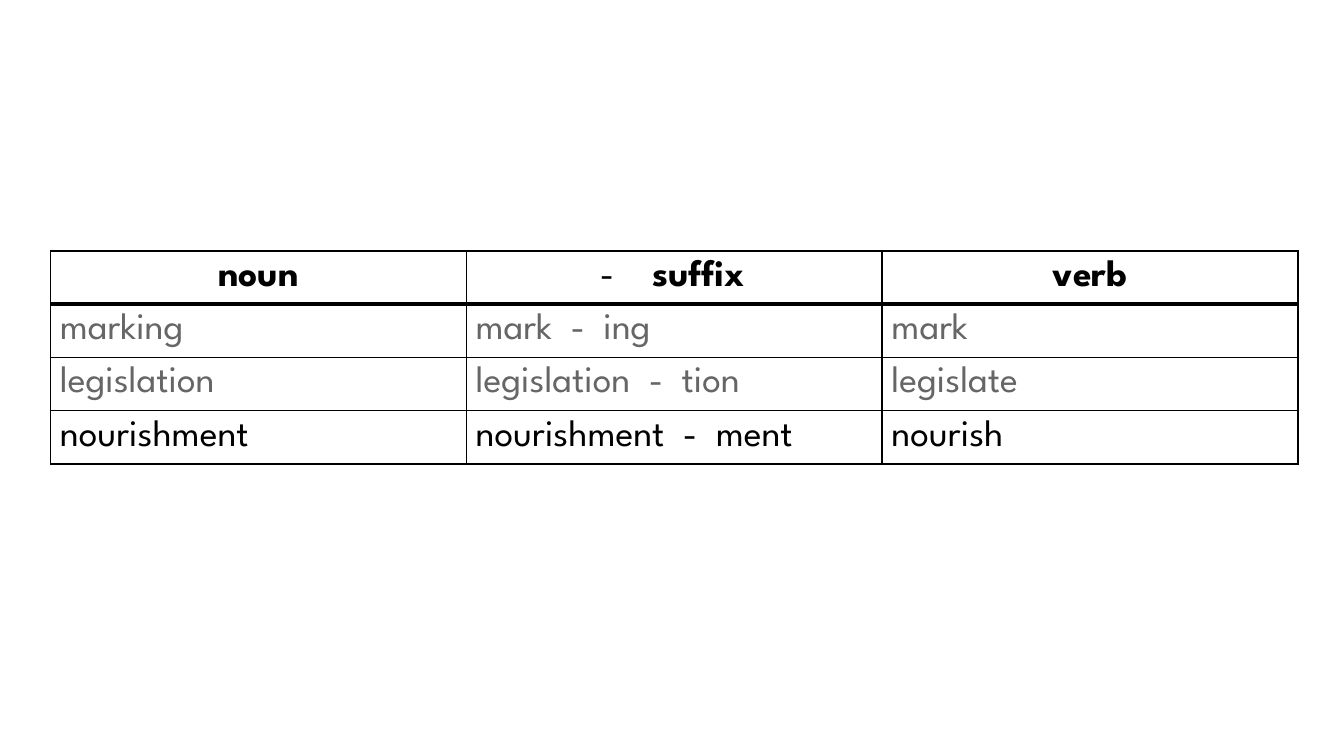
from lxml import etree
from pptx import Presentation
from pptx.dml.color import RGBColor
from pptx.enum.text import PP_ALIGN
from pptx.oxml.ns import qn
from pptx.util import Pt

CENTER, LEFT = PP_ALIGN.CENTER, PP_ALIGN.LEFT
COLORS = {"ink": "000000", "muted": "666666"}
FONT = "League Spartan"
ROWS = [
    ("noun", "suffix", "verb"),
    ("marking", "mark  -  ing", "mark"),
    ("legislation", "legislation  -  tion", "legislate"),
    ("nourishment", "nourishment  -  ment", "nourish"),
]
ROW_COLORS = ["ink", "muted", "muted", "ink"]
TABLE_LEFT, TABLE_TOP = 27.1, 134.5
COLUMN_WIDTH, ROW_HEIGHT = 222.75, 28.5
INSET = 5
THIN, THICK = 1, 2.25


def apply_format(target, values):
    """Set each attribute of the target from a dict."""
    for name, value in values.items():
        setattr(target, name, value)


def add_border(cell, side, width):
    """Draw a solid line along one side of a cell."""
    properties = cell._tc.get_or_add_tcPr()
    line = etree.SubElement(properties, qn(f"a:ln{side}"), w=str(Pt(width)))
    fill = etree.SubElement(line, qn("a:solidFill"))
    etree.SubElement(fill, qn("a:srgbClr"), val=COLORS["ink"])


def add_dash_bullet(para):
    """Give a paragraph a hanging dash as its bullet."""
    properties = para._p.get_or_add_pPr()
    properties.set("marL", str(Pt(36)))
    properties.set("indent", str(Pt(-28)))
    color = etree.SubElement(properties, qn("a:buClr"))
    etree.SubElement(color, qn("a:srgbClr"), val=COLORS["ink"])
    etree.SubElement(properties, qn("a:buFont"), typeface=FONT)
    etree.SubElement(properties, qn("a:buChar"), char="-")


def fill_cell(cell, text, color, header):
    """Write the styled text of one cell."""
    margins = ("margin_left", "margin_top", "margin_right", "margin_bottom")
    apply_format(cell, dict.fromkeys(margins, Pt(INSET)))
    cell.fill.background()
    para = cell.text_frame.paragraphs[0]
    para.alignment = CENTER if header else LEFT
    span = para.add_run()
    span.text = text
    apply_format(span.font, {"name": FONT, "size": Pt(20), "bold": header})
    span.font.color.rgb = RGBColor.from_string(COLORS[color])


def add_word_table(page):
    """Add the table of nouns, suffixes and verbs."""
    columns = len(ROWS[0])
    table = page.shapes.add_table(
        len(ROWS), columns, Pt(TABLE_LEFT), Pt(TABLE_TOP),
        Pt(COLUMN_WIDTH * columns), Pt(ROW_HEIGHT * len(ROWS))).table
    apply_format(table, {"first_row": False, "horz_banding": False})
    for column in table.columns:
        column.width = Pt(COLUMN_WIDTH)
    for index, words in enumerate(ROWS):
        table.rows[index].height = Pt(ROW_HEIGHT)
        widths = {"L": THIN, "R": THIN,
                  "T": THICK if index == 1 else THIN,
                  "B": THICK if index == 0 else THIN}
        for cell, word in zip(table.rows[index].cells, words):
            for side, width in widths.items():
                add_border(cell, side, width)
            fill_cell(cell, word, ROW_COLORS[index], index == 0)
    suffix_cell = table.cell(0, 1)
    suffix_cell.margin_right = Pt(15)
    add_dash_bullet(suffix_cell.text_frame.paragraphs[0])


def main():
    """Build the deck and save it."""
    deck = Presentation()
    apply_format(deck, {"slide_width": Pt(720), "slide_height": Pt(405)})
    page = deck.slides.add_slide(deck.slide_layouts[6])
    add_word_table(page)
    deck.save("out.pptx")


if __name__ == "__main__":
    main()
